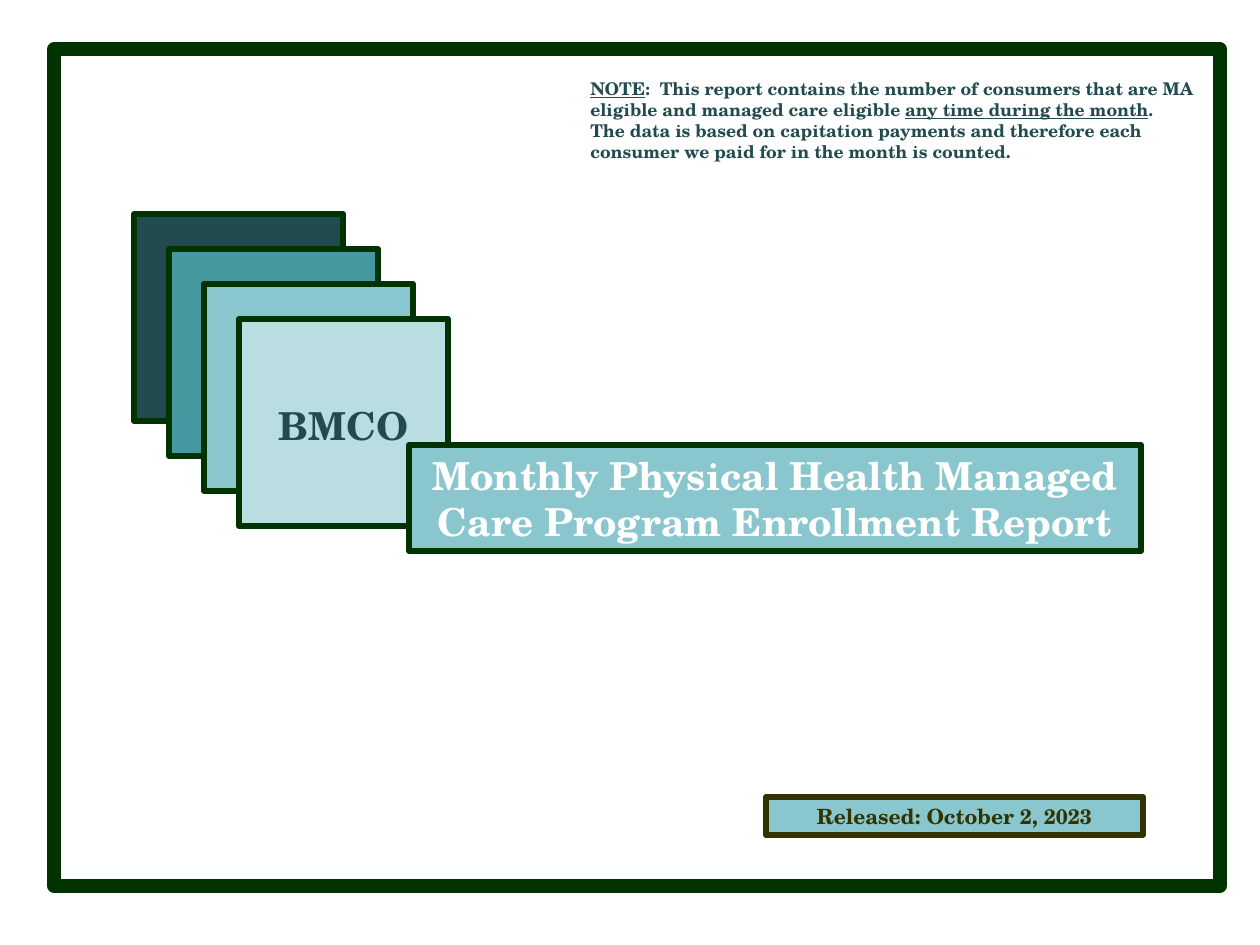
from dataclasses import dataclass

from pptx import Presentation
from pptx.dml.color import RGBColor
from pptx.enum.shapes import MSO_SHAPE
from pptx.enum.text import MSO_ANCHOR, MSO_AUTO_SIZE, PP_ALIGN
from pptx.util import Emu, Pt

PX_PER_INCH = 126


@dataclass(frozen=True)
class Theme:
    font: str = "TeX Gyre Schola"
    green: str = "003300"
    olive: str = "333300"
    teal: str = "224B50"
    mid_teal: str = "4597A0"
    aqua: str = "8AC6CD"
    pale_aqua: str = "BADDE1"
    white: str = "FFFFFF"
    title_size: int = 22
    date_size: int = 12
    note_size: int = 10
    frame_line: float = 7.5
    box_line: float = 3.5


THEME = Theme()


def px(n):
    return Emu(round(n * 914400 / PX_PER_INCH))


def rgb(value):
    return RGBColor.from_string(value)


def place(sp, left, top, width, height):
    sp.left, sp.top, sp.width, sp.height = map(px, (left, top, width, height))


def paint(sp, fill, line, weight=THEME.box_line):
    if fill:
        sp.fill.solid()
        sp.fill.fore_color.rgb = rgb(fill)
    else:
        sp.fill.background()
    sp.line.color.rgb = rgb(line)
    sp.line.width = Pt(weight)


def add_box(s, at, fill, line, weight=THEME.box_line):
    sp = s.shapes.add_shape(MSO_SHAPE.RECTANGLE, *map(px, at))
    sp.shadow.inherit = False
    paint(sp, fill, line, weight)
    return sp


def write(sp, runs, size, color, align=PP_ALIGN.CENTER, anchor=MSO_ANCHOR.MIDDLE):
    """Fill one paragraph from (text, underlined) pairs."""
    tf = sp.text_frame
    tf.word_wrap = True
    tf.auto_size = MSO_AUTO_SIZE.SHAPE_TO_FIT_TEXT
    tf.vertical_anchor = anchor
    p = tf.paragraphs[0]
    p.alignment = align
    for text, underlined in runs:
        r = p.add_run()
        r.text = text
        r.font.name = THEME.font
        r.font.size = Pt(size)
        r.font.bold = True
        r.font.underline = underlined
        r.font.color.rgb = rgb(color)


def add_text(s, at, runs, size, color, **layout):
    sp = s.shapes.add_textbox(*map(px, at))
    write(sp, runs, size, color, **layout)


def add_squares(s):
    fills = (THEME.teal, THEME.mid_teal, THEME.aqua, THEME.pale_aqua)
    for i, fill in enumerate(fills):
        add_box(s, (134 + 35 * i, 214 + 35 * i, 209, 207), fill, THEME.green)


def add_title(s, at, text):
    sp = s.shapes.title
    # The banner lies over the corner of the last square
    sp.element.getparent().append(sp.element)
    place(sp, *at)
    paint(sp, THEME.aqua, THEME.green)
    write(sp, [(text, False)], THEME.title_size, THEME.white)


def main():
    prs = Presentation()
    prs.slide_width, prs.slide_height = px(1260), px(945)
    s = prs.slides.add_slide(prs.slide_layouts[5])

    # Page frame
    add_box(s, (54, 49, 1166, 837), None, THEME.green, THEME.frame_line)

    # Stepped squares with the office name
    add_squares(s)
    add_text(s, (244, 396, 199, 59), [("BMCO", False)], THEME.title_size, THEME.teal)

    # Title banner
    add_title(s, (409, 445, 732, 106),
              "Monthly Physical Health Managed Care Program Enrollment Report")

    # Note on the data
    note = [
        ("NOTE", True),
        (":  This report contains the number of consumers that are MA "
         "eligible and managed care eligible ", False),
        ("any time during the month", True),
        (".  The data is based on capitation payments and therefore each "
         "consumer we paid for in the month is counted.", False),
    ]
    add_text(s, (578, 72, 630, 97), note, THEME.note_size, THEME.teal,
             align=PP_ALIGN.LEFT, anchor=MSO_ANCHOR.TOP)

    # Release date
    date = add_box(s, (766, 797, 377, 38), THEME.aqua, THEME.olive)
    write(date, [("Released: October 2, 2023", False)], THEME.date_size, THEME.olive)

    prs.save("out.pptx")


if __name__ == "__main__":
    main()
